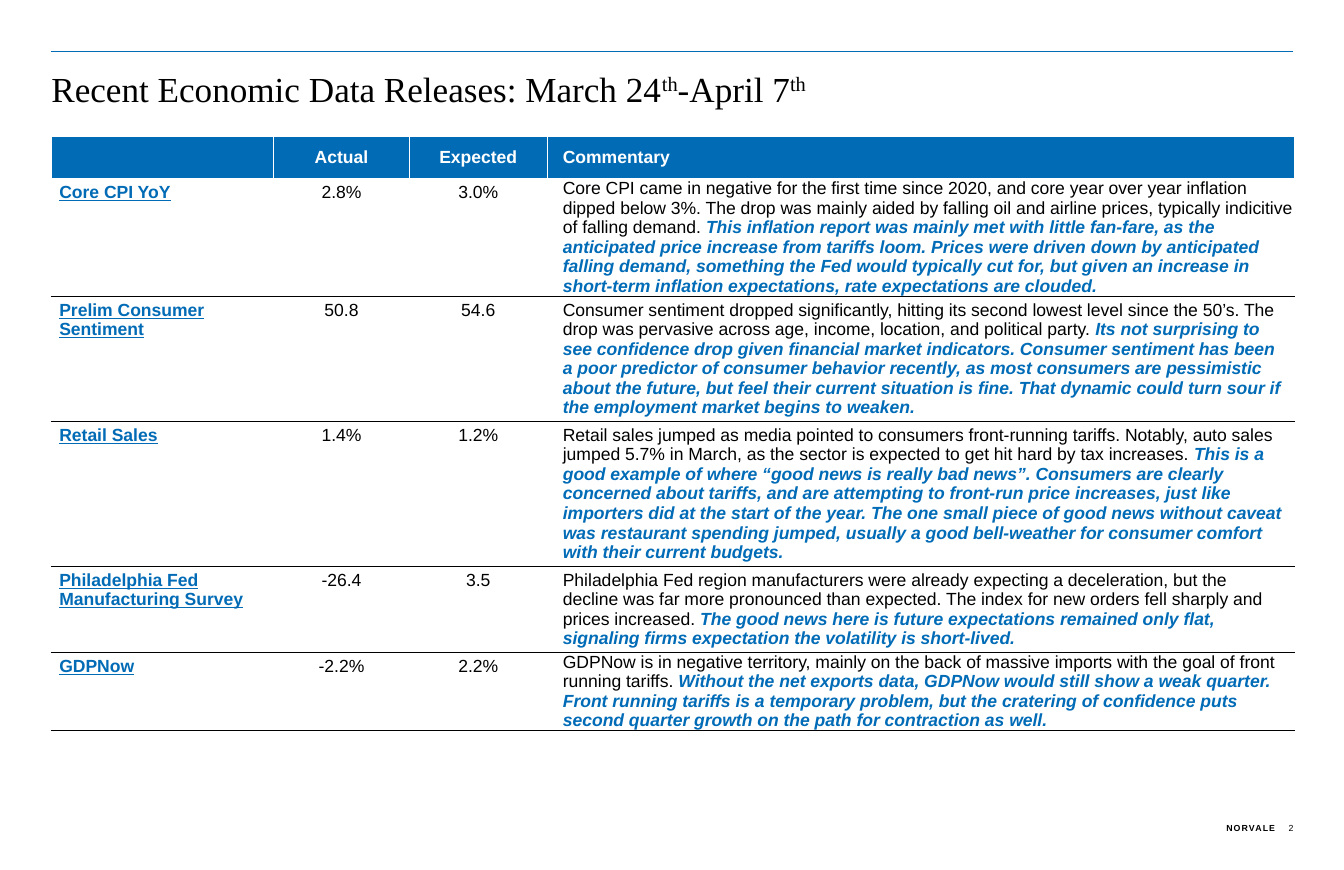
from dataclasses import dataclass

from lxml import etree
from pptx import Presentation
from pptx import util as u
from pptx.dml.color import RGBColor
from pptx.enum import shapes, text
from pptx.oxml.ns import qn

# Content
TITLE = [("Recent Economic Data Releases: March 24", False), ("th", True),
         ("-April 7", False), ("th", True)]
HEADERS = ["", "Actual", "Expected", "Commentary"]
# Release, actual, expected, facts, opinion, tight margins, row height
RELEASES = [
    ("Core CPI YoY", "2.8%", "3.0%",
     "Core CPI came in negative for the first time since 2020, and core year over year inflation "
     "dipped below 3%. The drop was mainly aided by falling oil and airline prices, typically "
     "indicitive of falling demand. ",
     "This inflation report was mainly met with little fan-fare, as the anticipated price increase "
     "from tariffs loom. Prices were driven down by anticipated falling demand, something the Fed "
     "would typically cut for, but given an increase in short-term inflation expectations, rate "
     "expectations are clouded.", True, 1.49),
    ("Prelim Consumer Sentiment", "50.8", "54.6",
     "Consumer sentiment dropped significantly, hitting its second lowest level since the 50’s. "
     "The drop was pervasive across age, income, location, and political party. ",
     "Its not surprising to see confidence drop given financial market indicators. Consumer "
     "sentiment has been a poor predictor of consumer behavior recently, as most consumers are "
     "pessimistic about the future, but feel their current situation is fine. That dynamic could "
     "turn sour if the employment market begins to weaken.", False, 1.58),
    ("Retail Sales", "1.4%", "1.2%",
     "Retail sales jumped as media pointed to consumers front-running tariffs. Notably, auto sales "
     "jumped 5.7% in March, as the sector is expected to get hit hard by tax increases. ",
     "This is a good example of where “good news is really bad news”. Consumers are clearly "
     "concerned about tariffs, and are attempting to front-run price increases, just like "
     "importers did at the start of the year. The one small piece of good news without caveat was "
     "restaurant spending jumped, usually a good bell-weather for consumer comfort with their "
     "current budgets.", False, 1.83),
    ("Philadelphia Fed Manufacturing Survey", "-26.4", "3.5",
     "Philadelphia Fed region manufacturers were already expecting a deceleration, but the decline "
     "was far more pronounced than expected. The index for new orders fell sharply and prices "
     "increased. ",
     "The good news here is future expectations remained only flat, signaling firms expectation "
     "the volatility is short-lived.", False, 1.09),
    ("GDPNow", "-2.2%", "2.2%",
     "GDPNow is in negative territory, mainly on the back of massive imports with the goal of "
     "front running tariffs. ",
     "Without the net exports data, GDPNow would still show a weak quarter. Front running tariffs "
     "is a temporary problem, but the cratering of confidence puts second quarter growth on the "
     "path for contraction as well.", True, 0.98),
]
COMPANY, PAGE = "NORVALE", "2"

# Layout in inches
LEFT, RIGHT = 0.65, 16.35
TABLE_TOP, HEADER_HEIGHT = 1.72, 0.54
COLUMN_WIDTHS = [2.81, 1.72, 1.74, 9.46]


@dataclass(frozen=True)
class Theme:
    blue: str = "026BB6"
    opinion: str = "006BB6"
    black: str = "000000"
    white: str = "FFFFFF"
    heading_font: str = "Times New Roman"
    body_font: str = "Arial"
    title_size: int = 32
    table_size: int = 16
    footer_size: int = 8


THEME = Theme()
LEFT_ALIGN, CENTER, RIGHT_ALIGN = (text.PP_ALIGN.LEFT, text.PP_ALIGN.CENTER,
                                   text.PP_ALIGN.RIGHT)


def add_text(paragraph, words, *, size=THEME.table_size, color=THEME.black,
             font=THEME.body_font, bold=False, italic=False, underline=False,
             align=LEFT_ALIGN, raised=False, spacing=0):
    paragraph.alignment = align
    run = paragraph.add_run()
    run.text = words
    run.font.name, run.font.size = font, u.Pt(size)
    run.font.bold, run.font.italic, run.font.underline = bold, italic, underline
    run.font.color.rgb = RGBColor.from_string(color)
    properties = run.font._element
    if raised:
        properties.set("baseline", "30000")
    if spacing:
        properties.set("spc", str(spacing * 100))


def set_margins(holder, left=0, top=0, right=0, bottom=0):
    holder.margin_left, holder.margin_top = u.Inches(left), u.Inches(top)
    holder.margin_right, holder.margin_bottom = u.Inches(right), u.Inches(bottom)


def set_borders(cell, **sides):
    properties = cell._tc.get_or_add_tcPr()
    for side in "LRTB":
        if side in sides:
            color, points = sides[side]
            line = etree.SubElement(properties, qn(f"a:ln{side}"), w=str(u.Pt(points)))
            fill = etree.SubElement(line, qn("a:solidFill"))
            etree.SubElement(fill, qn("a:srgbClr"), val=color)


def add_title(slide):
    title = slide.shapes.title
    title.left, title.top = u.Inches(LEFT), u.Inches(0.85)
    title.width, title.height = u.Inches(RIGHT - LEFT), u.Inches(1.1)
    frame = title.text_frame
    set_margins(frame)
    frame.auto_size = text.MSO_AUTO_SIZE.NONE
    frame.vertical_anchor = text.MSO_ANCHOR.TOP
    for words, raised in TITLE:
        add_text(frame.paragraphs[0], words, size=THEME.title_size,
                 font=THEME.heading_font, raised=raised)


def add_rule(slide):
    rule = slide.shapes.add_connector(shapes.MSO_CONNECTOR.STRAIGHT, u.Inches(LEFT),
                                      u.Inches(0.65), u.Inches(RIGHT), u.Inches(0.65))
    rule.line.color.rgb = RGBColor.from_string(THEME.blue)
    rule.line.width = u.Pt(0.5)
    etree.SubElement(rule._element.spPr, qn("a:effectLst"))


def add_footer(slide, words, left, width, **style):
    box = slide.shapes.add_textbox(u.Inches(left), u.Inches(10.39),
                                   u.Inches(width), u.Inches(0.15))
    frame = box.text_frame
    frame.word_wrap = True
    frame.vertical_anchor = text.MSO_ANCHOR.MIDDLE
    set_margins(frame)
    add_text(frame.paragraphs[0], words, size=THEME.footer_size, align=RIGHT_ALIGN, **style)


def add_releases(slide):
    heights = [HEADER_HEIGHT] + [release[-1] for release in RELEASES]
    table = slide.shapes.add_table(
        len(heights), len(COLUMN_WIDTHS), u.Inches(LEFT), u.Inches(TABLE_TOP),
        u.Inches(sum(COLUMN_WIDTHS)), u.Inches(sum(heights))).table
    table.horz_banding = False
    for column, width in zip(table.columns, COLUMN_WIDTHS):
        column.width = u.Inches(width)
    for row, height in zip(table.rows, heights):
        row.height = u.Inches(height)

    # Header row
    white_line, black_line = (THEME.white, 1), (THEME.black, 0.5)
    alignments = [LEFT_ALIGN, CENTER, CENTER, LEFT_ALIGN]
    for column, (words, align) in enumerate(zip(HEADERS, alignments)):
        cell = table.cell(0, column)
        set_borders(cell, L=white_line, R=white_line, T=white_line, B=white_line)
        cell.fill.solid()
        cell.fill.fore_color.rgb = RGBColor.from_string(THEME.blue)
        cell.vertical_anchor = text.MSO_ANCHOR.MIDDLE
        if words:
            add_text(cell.text_frame.paragraphs[0], words, color=THEME.white,
                     bold=True, align=align)
    table.cell(0, 3).margin_left = u.Inches(0.2)

    # One row for each release
    for row, (name, actual, expected, facts, opinion, tight, _) in enumerate(RELEASES, 1):
        cells = [table.cell(row, column) for column in range(len(COLUMN_WIDTHS))]
        for cell in cells:
            top = white_line if row == 1 else black_line
            set_borders(cell, L=white_line, R=white_line, T=top, B=black_line)
            cell.fill.background()
        name_line, actual_line, expected_line, commentary = [
            cell.text_frame.paragraphs[0] for cell in cells]
        add_text(name_line, name, color=THEME.blue, bold=True, underline=True)
        add_text(actual_line, actual, align=CENTER)
        add_text(expected_line, expected, align=CENTER)
        add_text(commentary, facts)
        add_text(commentary, opinion, color=THEME.opinion, bold=True, italic=True)
        cells[3].margin_left = u.Inches(0.2)
        if tight:
            set_margins(cells[3], left=0.2)
            cells[3].vertical_anchor = text.MSO_ANCHOR.MIDDLE


def main():
    presentation = Presentation()
    presentation.slide_width, presentation.slide_height = u.Inches(17), u.Inches(11)
    slide = presentation.slides.add_slide(presentation.slide_layouts[5])
    add_rule(slide)
    add_title(slide)
    add_releases(slide)
    add_footer(slide, COMPANY, 15.33, 0.8, bold=True, spacing=1)
    add_footer(slide, PAGE, 16.07, 0.29)
    presentation.save("out.pptx")


if __name__ == "__main__":
    main()
